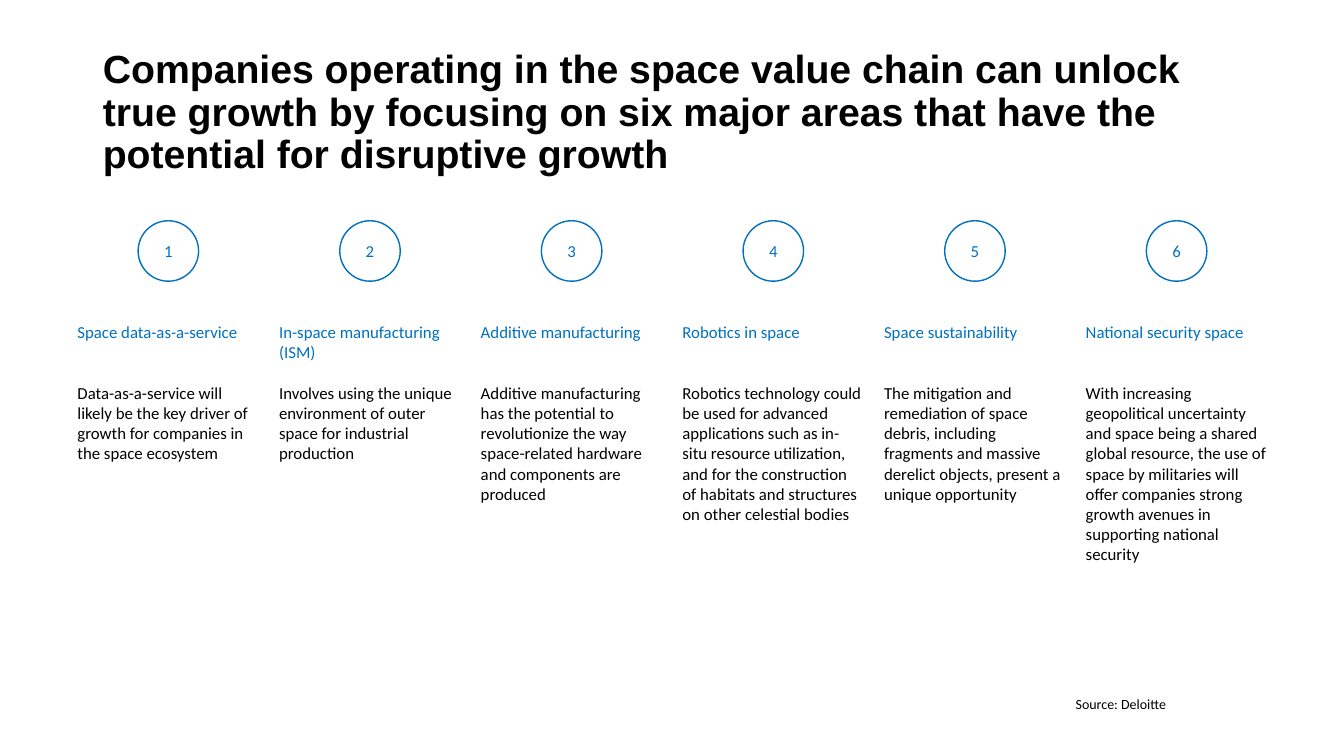
from pptx import Presentation
from pptx.dml.color import RGBColor
from pptx.enum.shapes import MSO_SHAPE
from pptx.enum.text import MSO_ANCHOR, MSO_AUTO_SIZE, PP_ALIGN
from pptx.util import Inches, Pt

BLACK = RGBColor(0x00, 0x00, 0x00)
BLUE = RGBColor(0x00, 0x70, 0xC0)
LEFT, PITCH = 0.67, 2
DISC = 0.6
LINE = 14.65  # height in points of one 12 pt line

TITLE = ("Companies operating in the space value chain can unlock true growth by "
         "focusing on six major areas that have the potential for disruptive growth")

# Heading, number of lines it takes, body
AREAS = [
    ("Space data-as-a-service", 1,
     "Data-as-a-service will likely be the key driver of growth for companies "
     "in the space ecosystem"),
    ("In-space manufacturing (ISM)", 2,
     "Involves using the unique environment of outer space for industrial production"),
    ("Additive manufacturing", 1,
     "Additive manufacturing has the potential to revolutionize the way "
     "space-related hardware and components are produced"),
    ("Robotics in space", 1,
     "Robotics technology could be used for advanced applications such as in-situ "
     "resource utilization, and for the construction of habitats and structures "
     "on other celestial bodies"),
    ("Space sustainability", 1,
     "The mitigation and remediation of space debris, including fragments and "
     "massive derelict objects, present a unique opportunity"),
    ("National security space", 1,
     "With increasing geopolitical uncertainty and space being a shared global "
     "resource, the use of space by militaries will offer companies strong growth "
     "avenues in supporting national security"),
]


def write(para, text, size=12, color=BLACK, font="Calibri", bold=False,
          align=PP_ALIGN.LEFT, before=0, spacing=1.0):
    para.alignment = align
    para.space_before = Pt(before)
    para.line_spacing = spacing
    run = para.add_run()
    run.text = text
    run.font.name = font
    run.font.size = Pt(size)
    run.font.bold = bold
    run.font.color.rgb = color


def add_title(slide):
    title = slide.shapes.title
    title.left, title.top = Inches(0.92), Inches(0.4)
    title.width, title.height = Inches(11.5), Inches(1.45)
    frame = title.text_frame
    frame.auto_size = MSO_AUTO_SIZE.NONE
    frame.vertical_anchor = MSO_ANCHOR.MIDDLE
    write(frame.paragraphs[0], TITLE, size=28, font="Arial", bold=True, spacing=0.9)


def add_box(slide, left, top, width, height):
    """Add a wrapping text box and return its text frame."""
    box = slide.shapes.add_textbox(Inches(left), Inches(top), Inches(width), Inches(height))
    box.text_frame.word_wrap = True
    return box.text_frame


def add_disc(slide, left, number):
    disc = slide.shapes.add_shape(MSO_SHAPE.OVAL, Inches(left), Inches(2.19),
                                  Inches(DISC), Inches(DISC))
    disc.shadow.inherit = False
    disc.fill.background()
    disc.line.color.rgb = BLUE
    disc.line.width = Pt(1)
    frame = disc.text_frame
    frame.margin_left = frame.margin_right = 0
    frame.vertical_anchor = MSO_ANCHOR.MIDDLE
    write(frame.paragraphs[0], str(number), color=BLUE, align=PP_ALIGN.CENTER)


def add_area(slide, left, head, lines, body):
    """Add one column; the bodies start level whatever lines the heading takes."""
    frame = add_box(slide, left, 3.14, PITCH, 3.7)
    write(frame.paragraphs[0], head, color=BLUE)
    write(frame.add_paragraph(), body, before=(3 - lines) * LINE)


def main():
    deck = Presentation()
    deck.slide_width, deck.slide_height = Inches(13.33), Inches(7.5)
    slide = deck.slides.add_slide(deck.slide_layouts[5])
    add_title(slide)
    for index, (head, lines, body) in enumerate(AREAS):
        left = LEFT + index * PITCH
        add_disc(slide, left + (PITCH - DISC) / 2, index + 1)
        add_area(slide, left, head, lines, body)
    source = add_box(slide, 10.57, 6.85, 2.1, 0.3)
    write(source.paragraphs[0], "Source: Deloitte", size=10)
    deck.save("out.pptx")


if __name__ == "__main__":
    main()
